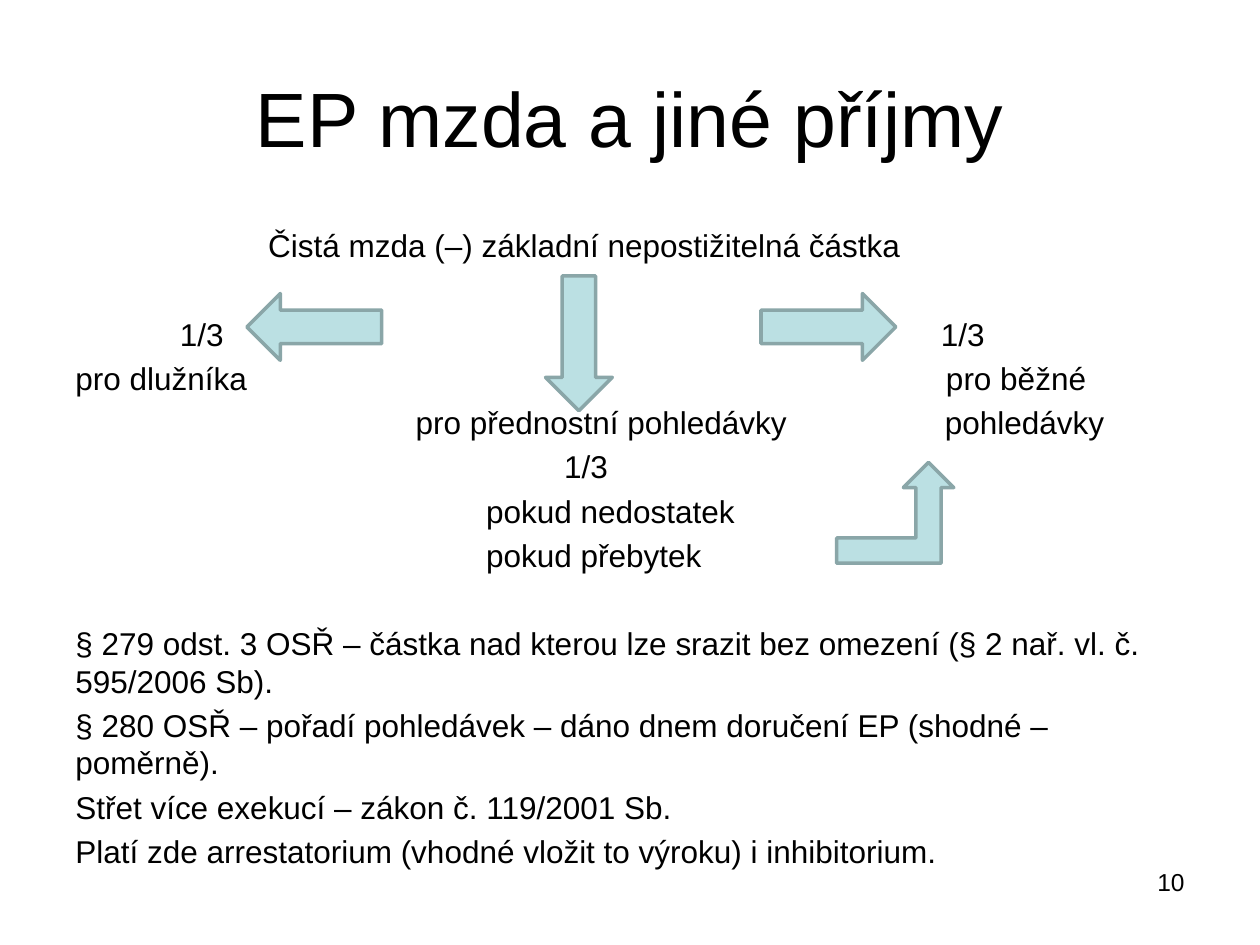
from lxml.etree import SubElement
from pptx import Presentation
from pptx.dml.color import RGBColor
from pptx.enum.shapes import MSO_SHAPE as SHAPE
from pptx.enum.text import MSO_ANCHOR as ANCHOR, PP_ALIGN as ALIGN
from pptx.oxml.ns import qn
from pptx.util import Emu, Inches, Pt

# Content: each row holds (text, inches from the left text edge)
TITLE = "EP mzda a jiné příjmy"
GAP = None  # one empty row, made with paragraph spacing
ROWS = [
    [("Čistá mzda (–) základní nepostižitelná částka", 1.53)],
    GAP,
    [("1/3", 0.83), ("1/3", 6.87)],
    [("pro dlužníka", 0), ("pro běžné", 6.91)],
    [("pro přednostní pohledávky", 2.7), ("pohledávky", 6.9)],
    [("1/3", 3.88)],
    [("pokud nedostatek", 3.26)],
    [("pokud přebytek", 3.26)],
    GAP,
    [("§ 279 odst. 3 OSŘ – částka nad kterou lze srazit bez omezení "
      "(§ 2 nař. vl. č. 595/2006 Sb).", 0)],
    [("§ 280 OSŘ – pořadí pohledávek – dáno dnem doručení EP "
      "(shodné – poměrně).", 0)],
    [("Střet více exekucí – zákon č. 119/2001 Sb.", 0)],
    [("Platí zde arrestatorium (vhodné vložit to výroku) i inhibitorium.", 0)],
]
PAGE = "10"

# Format
COLORS = {"text": "000000", "fill": "BBE0E3", "line": "8AA6A8"}
FONT = "Arial"
W, H = 10, 7.5
MARGIN = 0.05 * W
LINE, SPACE = 21.3, 4  # points
LONG, SHORT = 1.07, 0.53  # straight arrows
ARROWS = [
    (SHAPE.RIGHT_ARROW, 6.04, 2.33, LONG, SHORT),
    (SHAPE.DOWN_ARROW, 4.33, 2.19, SHORT, LONG),
    (SHAPE.LEFT_ARROW, 1.96, 2.33, LONG, SHORT),
    (SHAPE.BENT_UP_ARROW, 6.64, 3.67, 0.93, 0.8),
]

prs = Presentation()
prs.slide_width, prs.slide_height = Inches(W), Inches(H)
s = prs.slides.add_slide(prs.slide_layouts[6])


def rgb(name):
    return RGBColor.from_string(COLORS[name])


def add_box(x, y, w, h, anchor=ANCHOR.TOP):
    tf = s.shapes.add_textbox(*map(Inches, (x, y, w, h))).text_frame
    tf.word_wrap = True
    tf.vertical_anchor = anchor
    return tf


def write(p, text, size=18, align=ALIGN.LEFT):
    p.alignment = align
    r = p.add_run()
    r.text = text
    r.font.name, r.font.size = FONT, Pt(size)
    r.font.color.rgb = rgb("text")


def add_tabs(p, stops):
    tabs = SubElement(p._p.get_or_add_pPr(), qn("a:tabLst"))
    for x in stops:
        SubElement(tabs, qn("a:tab"), pos=str(Emu(Inches(x))), algn="l")


# Title
tf = add_box(MARGIN, 0.04 * H, W - 2 * MARGIN, 1.25, ANCHOR.MIDDLE)
write(tf.paragraphs[0], TITLE, size=44, align=ALIGN.CENTER)

# Body: columns are tab stops, empty rows add to the space before
tf = add_box(MARGIN, 1.75, W - 2 * MARGIN, 0.66 * H)
p, before = tf.paragraphs[0], 0
for row in ROWS:
    if row is GAP:
        before += LINE + SPACE
        continue
    if p is None:
        p = tf.add_paragraph()
    stops = [x for _, x in row if x]
    if stops:
        add_tabs(p, stops)
    p.line_spacing, p.space_before = Pt(LINE), Pt(before)
    write(p, "".join("\t" * bool(x) + text for text, x in row))
    p, before = None, SPACE

# Page number
tf = add_box(7.17, 6.83, 2.33, 0.52)
write(tf.paragraphs[0], PAGE, size=14, align=ALIGN.RIGHT)

# Arrows
for kind, *place in ARROWS:
    sp = s.shapes.add_shape(kind, *map(Inches, place))
    sp.shadow.inherit = False
    sp.fill.solid()
    sp.fill.fore_color.rgb = rgb("fill")
    sp.line.color.rgb = rgb("line")
    sp.line.width = Pt(2)

prs.save("out.pptx")
